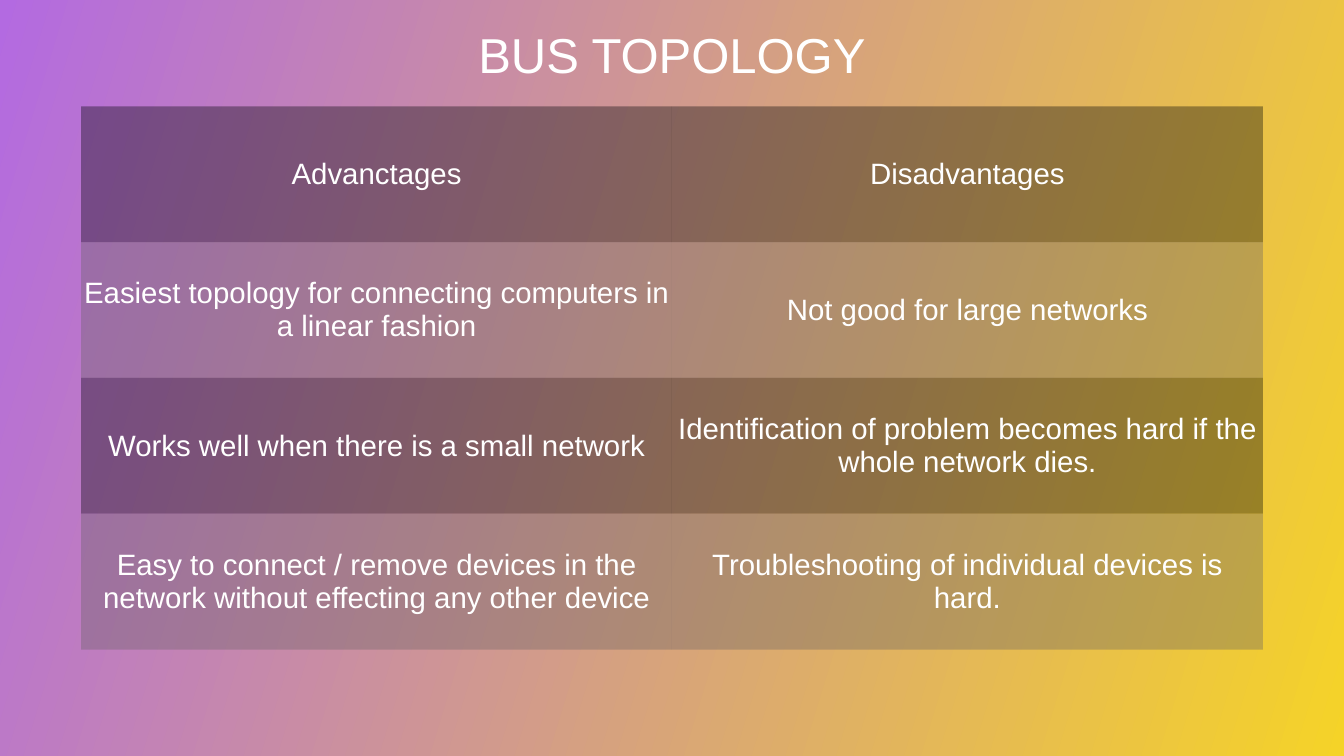
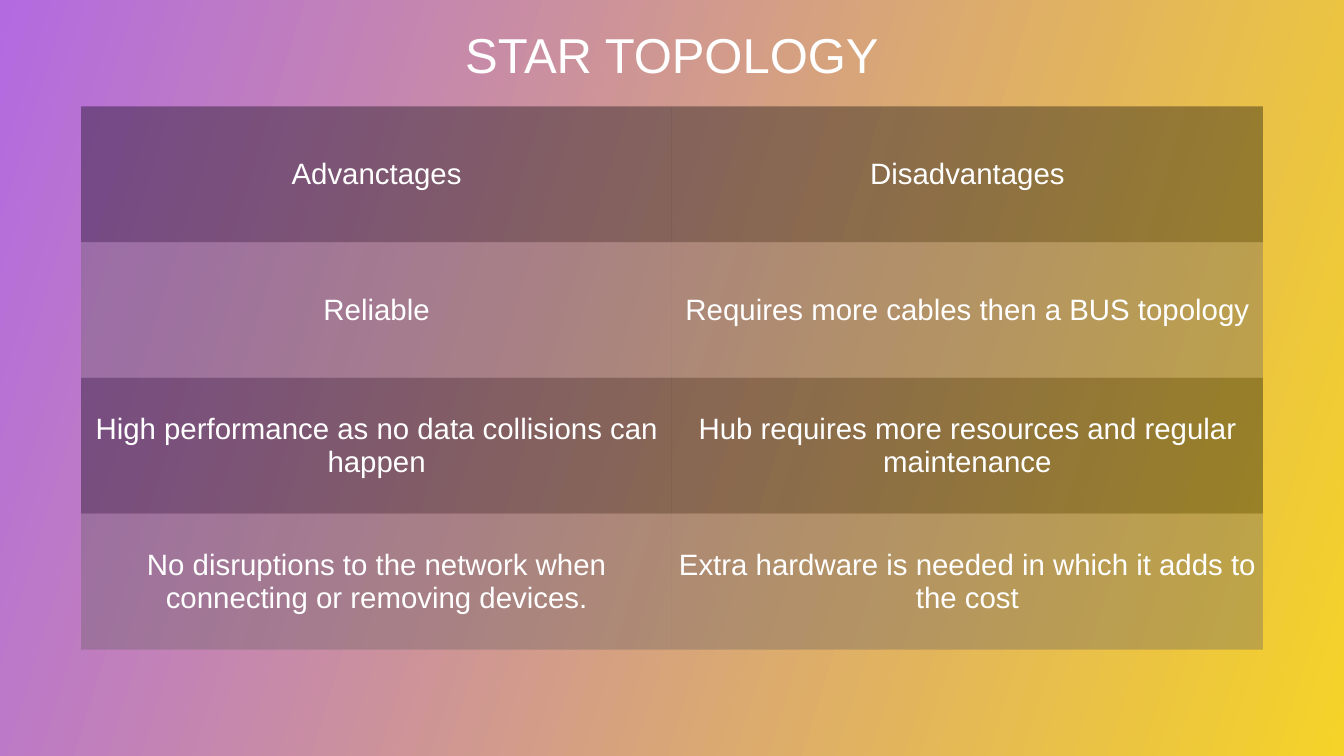
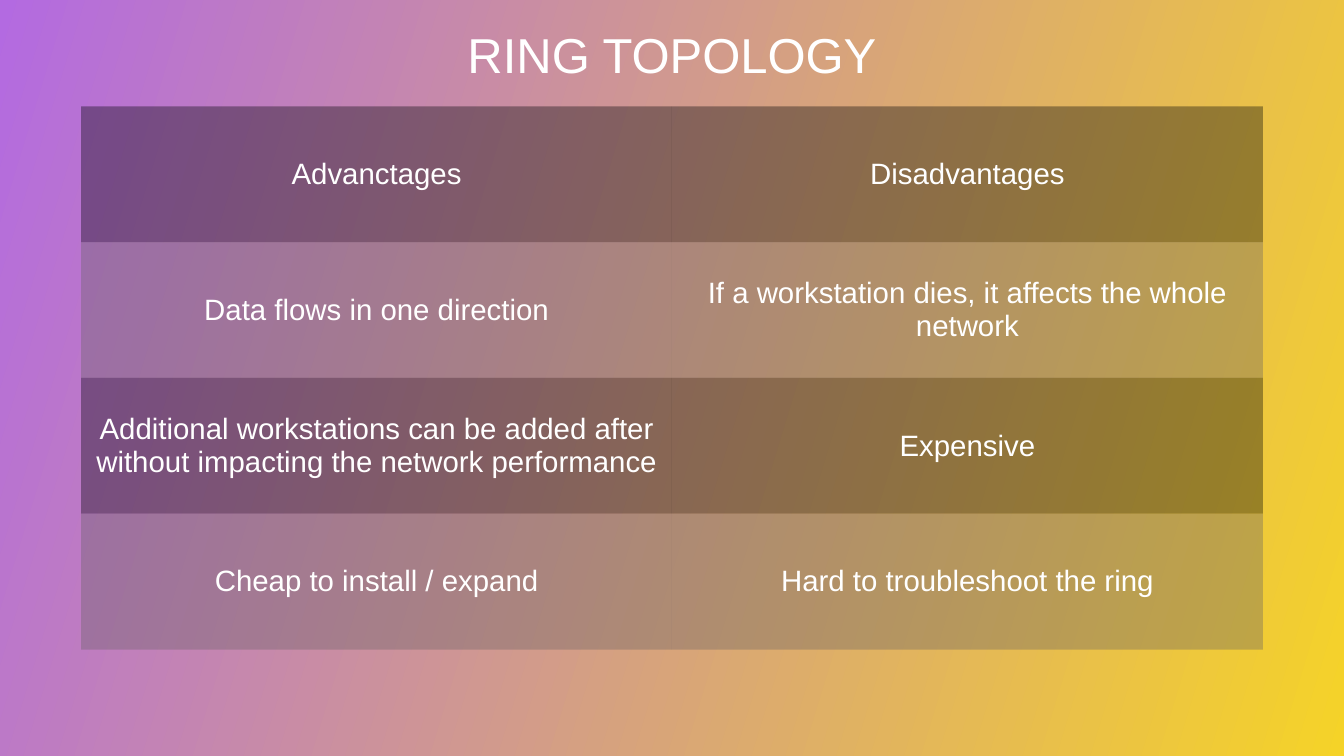
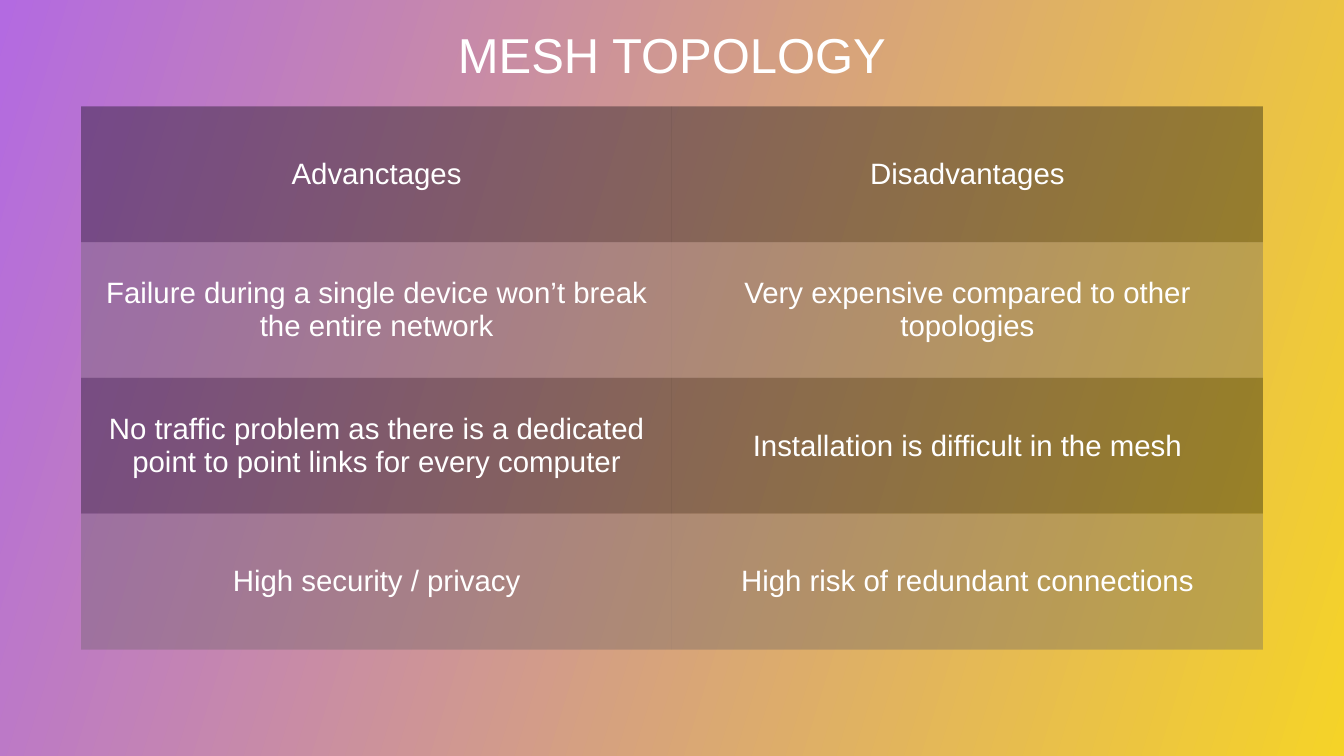
from lxml import etree
from pptx import Presentation
from pptx.dml.color import RGBColor
from pptx.enum import text
from pptx.oxml.ns import qn
from pptx.util import Pt

HEADER = ("Advanctages", "Disadvantages")
TOPOLOGIES = {
    "BUS TOPOLOGY": [
        ("Easiest topology for connecting computers in a linear fashion",
         "Not good for large networks"),
        ("Works well when there is a small network",
         "Identification of problem becomes hard if the whole network dies."),
        ("Easy to connect / remove devices in the network without effecting any other device",
         "Troubleshooting of individual devices is hard."),
    ],
    "STAR TOPOLOGY": [
        ("Reliable",
         "Requires more cables then a BUS topology"),
        ("High performance as no data collisions can happen",
         "Hub requires more resources and regular maintenance"),
        ("No disruptions to the network when connecting or removing devices.",
         "Extra hardware is needed in which it adds to the cost"),
    ],
    "RING TOPOLOGY": [
        ("Data flows in one direction",
         "If a workstation dies, it affects the whole network"),
        ("Additional workstations can be added after without impacting the network performance",
         "Expensive"),
        ("Cheap to install / expand",
         "Hard to troubleshoot the ring"),
    ],
    "MESH TOPOLOGY": [
        ("Failure during a single device won’t break the entire network",
         "Very expensive compared to other topologies"),
        ("No traffic problem as there is a dedicated point to point links for every computer",
         "Installation is difficult in the mesh"),
        ("High security / privacy",
         "High risk of redundant connections"),
    ],
}

COLORS = {
    "yellow": "F5D328",
    "purple": "B36AE1",
    "dark_row": "000205",
    "light_row": "676164",
    "text": "FFFFFF",
}
FONT = "Arial"
SLIDE_W, SLIDE_H = 1920, 1080
TITLE_BOX = (479, 29, 962, 96)
TITLE_SIZE, CELL_SIZE = 70, 42
TABLE_LEFT, TABLE_TOP = 116, 152
COL_W, ROW_H = 844, 194
INSET = 4
ROW_OPACITY = 36
NO_STYLE_NO_GRID = "{2D5ABB26-0587-4C30-8999-92F81FD0307C}"


def rgb(name):
    return RGBColor.from_string(COLORS[name])


def set_background(s):
    fill = s.background.fill
    fill.gradient()
    fill.gradient_angle = 163
    for stop, name in zip(fill.gradient_stops, ("yellow", "purple")):
        stop.color.rgb = rgb(name)


def set_insets(area):
    """Give a table cell or a text frame the same inset on every side."""
    area.margin_left = area.margin_right = Pt(INSET)
    area.margin_top = area.margin_bottom = Pt(INSET)
    area.vertical_anchor = text.MSO_ANCHOR.MIDDLE


def write(tf, words, size):
    p = tf.paragraphs[0]
    p.alignment = text.PP_ALIGN.CENTER
    r = p.add_run()
    r.text = words
    r.font.name = FONT
    r.font.size = Pt(size)
    r.font.color.rgb = rgb("text")


def fill_cell(cell, name):
    cell.fill.solid()
    cell.fill.fore_color.rgb = rgb(name)
    color = cell._tc.tcPr.find(".//" + qn("a:srgbClr"))
    etree.SubElement(color, qn("a:alpha")).set("val", str(ROW_OPACITY * 1000))


def add_comparison(s, rows):
    n_cols = len(HEADER)
    frame = s.shapes.add_table(len(rows), n_cols, Pt(TABLE_LEFT), Pt(TABLE_TOP),
                               Pt(COL_W * n_cols), Pt(ROW_H * len(rows)))
    table = frame.table
    table.first_row = table.horz_banding = False
    table._tbl.tblPr.find(qn("a:tableStyleId")).text = NO_STYLE_NO_GRID
    for i, row in enumerate(rows):
        for j, words in enumerate(row):
            cell = table.cell(i, j)
            fill_cell(cell, "light_row" if i % 2 else "dark_row")
            set_insets(cell)
            write(cell.text_frame, words, CELL_SIZE)


def add_title(s, title):
    tf = s.shapes.add_textbox(*map(Pt, TITLE_BOX)).text_frame
    tf.word_wrap = True
    set_insets(tf)
    write(tf, title, TITLE_SIZE)


def main():
    prs = Presentation()
    prs.slide_width, prs.slide_height = Pt(SLIDE_W), Pt(SLIDE_H)
    for title, points in TOPOLOGIES.items():
        s = prs.slides.add_slide(prs.slide_layouts[6])
        set_background(s)
        add_comparison(s, [HEADER, *points])
        add_title(s, title)
    prs.save("out.pptx")


if __name__ == "__main__":
    main()
